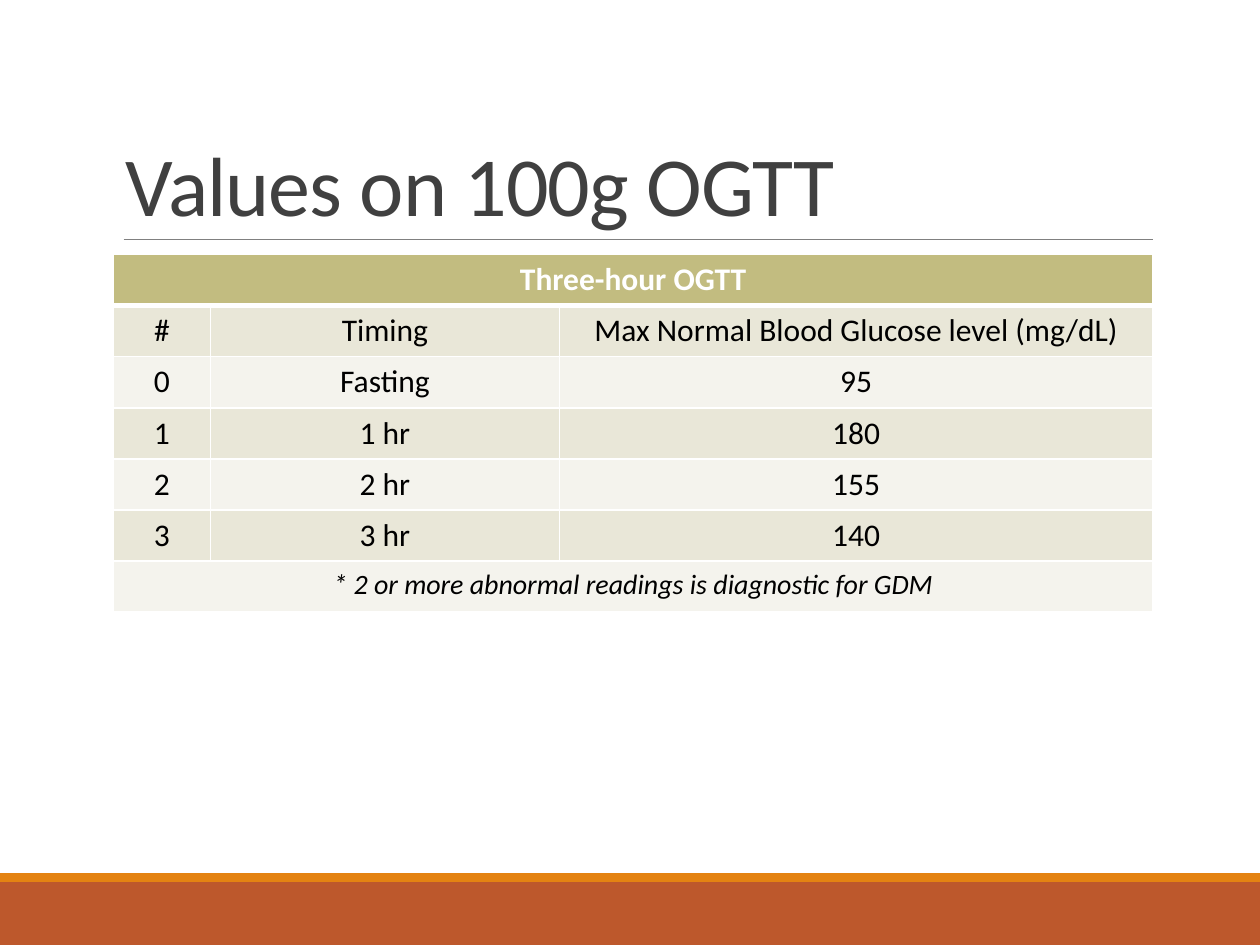
from lxml.etree import SubElement
from pptx import Presentation
from pptx.dml.color import RGBColor
from pptx.enum.shapes import MSO_CONNECTOR as Connector, MSO_SHAPE as Shape
from pptx.enum.text import MSO_ANCHOR as Anchor, PP_ALIGN as Align
from pptx.oxml.ns import qn
from pptx.util import Cm, Pt

COLORS = {
    "rust": "BD582C",
    "orange": "E48312",
    "rule": "808080",
    "title": "404040",
    "header": "C2BC80",
    "dark_band": "E9E7D8",
    "light_band": "F4F3ED",
    "white": "FFFFFF",
    "black": "000000",
}


def color(name):
    return RGBColor.from_string(COLORS[name])


def add_border(cell, side, points):
    line = SubElement(cell._tc.get_or_add_tcPr(), qn(f"a:ln{side}"), w=str(Pt(points)))
    fill = SubElement(line, qn("a:solidFill"))
    SubElement(fill, qn("a:srgbClr"), val=COLORS["white"])


deck = Presentation()
deck.slide_width, deck.slide_height = Cm(25.4), Cm(19.05)
page = deck.slides.add_slide(deck.slide_layouts[6])

for name, top, height in [("rust", 17.78, 1.27), ("orange", 17.6, 0.18)]:
    strip = page.shapes.add_shape(Shape.RECTANGLE, 0, Cm(top), deck.slide_width, Cm(height))
    strip.shadow.inherit = False
    strip.fill.solid()
    strip.fill.fore_color.rgb = color(name)
    strip.line.fill.background()

rule = page.shapes.add_connector(Connector.STRAIGHT, Cm(2.49), Cm(4.83), Cm(23.24), Cm(4.83))
rule.line.color.rgb = color("rule")
rule.line.width = Pt(0.5)
SubElement(rule._element.spPr, qn("a:effectLst"))

title = page.shapes.add_textbox(Cm(2.29), Cm(0.79), Cm(20.95), Cm(4.04))
title.text_frame.word_wrap = True
title.text_frame.vertical_anchor = Anchor.BOTTOM
para = title.text_frame.paragraphs[0]
para.line_spacing = 0.85
para.font.name = "Calibri"
para.font.size = Pt(48)
para.font.color.rgb = color("title")
span = para.add_run()
span.text = "Values on 100g OGTT"
span._r.get_or_add_rPr().set("spc", "-50")

rows = [
    ["Three-hour OGTT", "", ""],
    ["#", "Timing", "Max Normal Blood Glucose level (mg/dL)"],
    ["0", "Fasting", "95"],
    ["1", "1 hr", "180"],
    ["2", "2 hr", "155"],
    ["3", "3 hr", "140"],
    ["* 2 or more abnormal readings is diagnostic for GDM", "", ""],
]
last = len(rows) - 1
widths = [1.95, 7.04, 11.96]
row_height = 1.03
table = page.shapes.add_table(
    len(rows), len(widths), Cm(2.29), Cm(5.13), Cm(sum(widths)), Cm(row_height * len(rows))
).table
for column, width in zip(table.columns, widths):
    column.width = Cm(width)
for row in table.rows:
    row.height = Cm(row_height)
for index in (0, last):
    table.cell(index, 0).merge(table.cell(index, len(widths) - 1))

for index, texts in enumerate(rows):
    band = "header" if index == 0 else "dark_band" if index % 2 else "light_band"
    for position, text in enumerate(texts):
        cell = table.cell(index, position)
        for side in "LRTB":
            heavy = (index, side) in [(0, "B"), (1, "T")]
            add_border(cell, side, 3 if heavy else 1)
        cell.fill.solid()
        cell.fill.fore_color.rgb = color(band)
        cell.margin_left = cell.margin_right = Cm(0.27)
        para = cell.text_frame.paragraphs[0]
        para.alignment = Align.CENTER
        para.font.name = "Calibri"
        para.font.size = Pt(16 if index == last else 18)
        para.font.bold = index == 0
        para.font.italic = index == last
        para.font.color.rgb = color("black" if index else "white")
        if text:
            para.add_run().text = text

deck.save("out.pptx")
